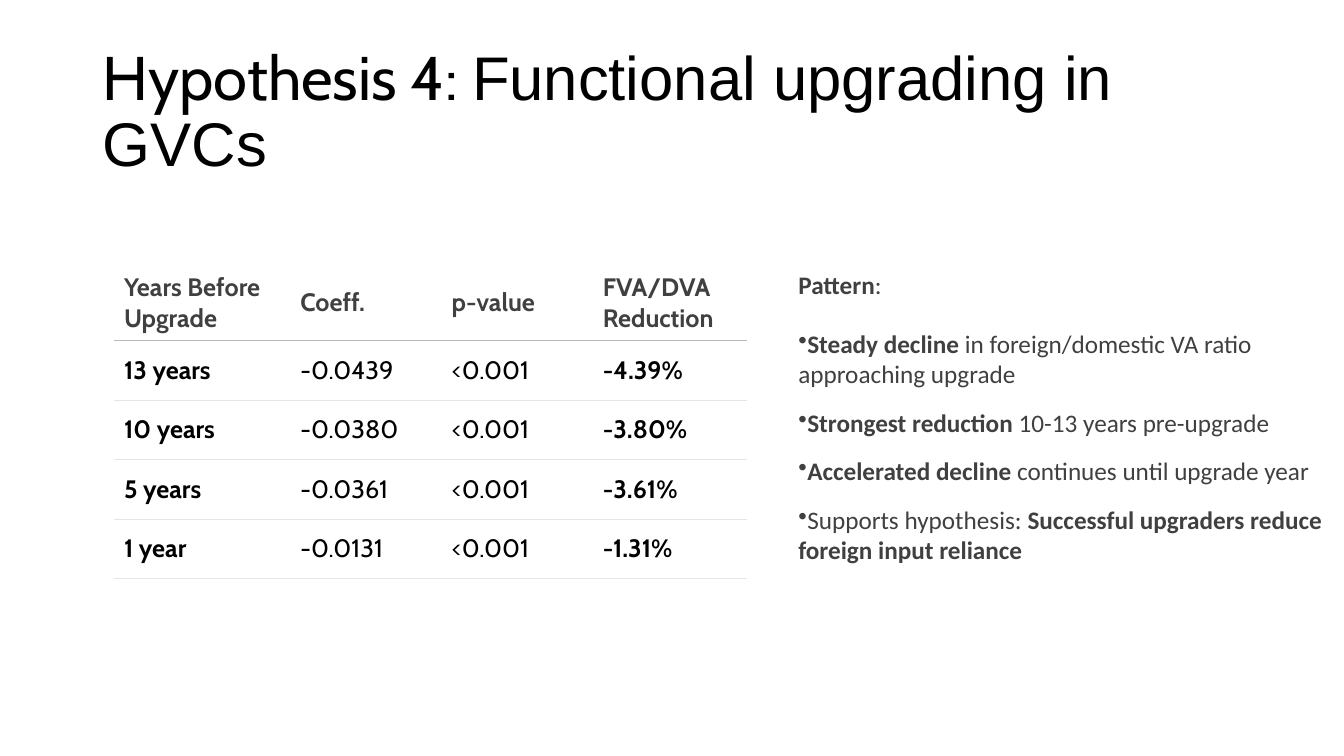
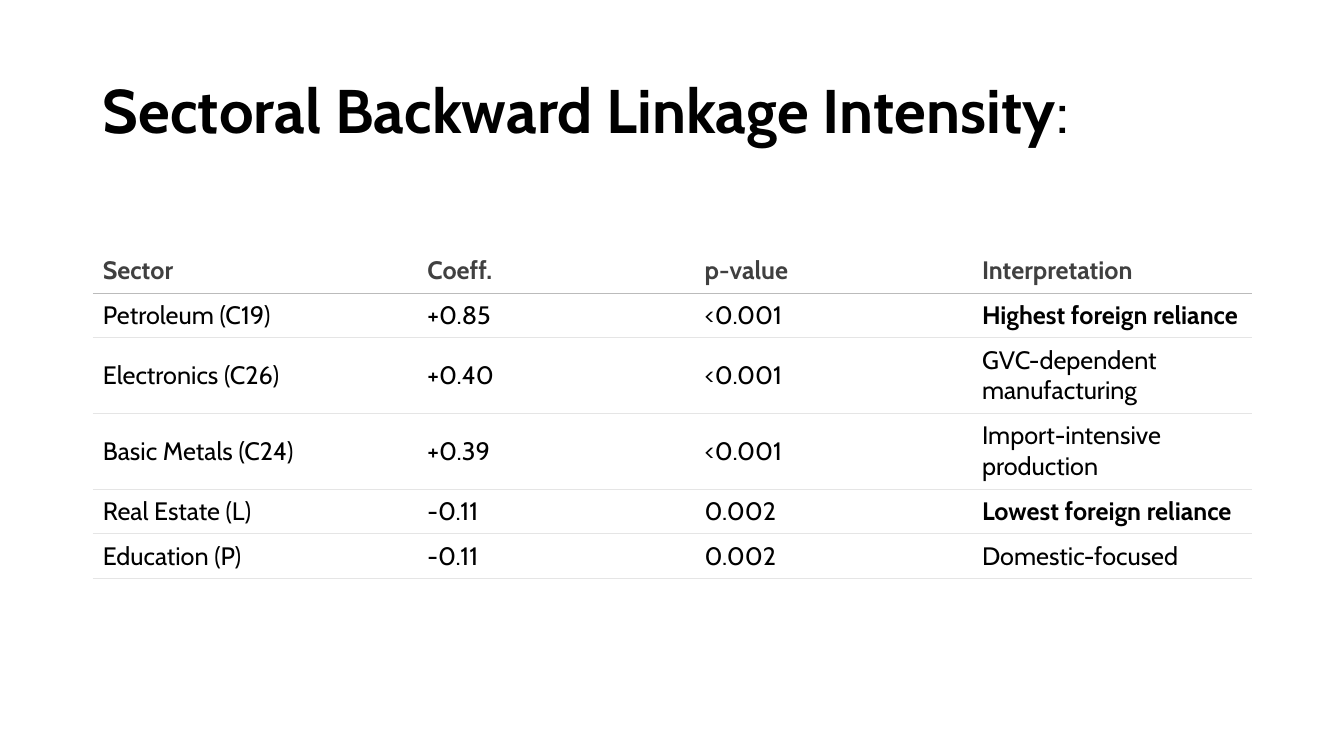
from lxml.etree import SubElement
from pptx import Presentation
from pptx.dml.color import RGBColor
from pptx.enum.text import MSO_ANCHOR as Anchor, MSO_AUTO_SIZE as AutoSize, PP_ALIGN as Align
from pptx.oxml.ns import qn
from pptx.util import Pt

PX = 9144  # EMU, 100 px to the inch
BLACK = RGBColor(0x00, 0x00, 0x00)
WHITE = RGBColor(0xFF, 0xFF, 0xFF)
GRAY = RGBColor(0x40, 0x40, 0x40)
HEADER_RULE = RGBColor(0xBB, 0xBB, 0xBB)
ROW_RULE = RGBColor(0xE5, 0xE5, 0xE5)
RULE_WIDTH = Pt(0.33)
TITLE_ONLY = 5


def px(*lengths):
    return [length * PX for length in lengths]


def write(para, *spans, font="Cabin", size=18, color=BLACK, bold=False):
    """Add spans to a paragraph; a span is text or (text, changed formats)."""
    for item in spans:
        text, changes = (item, {}) if isinstance(item, str) else item
        span = para.add_run()
        span.text = text
        span.font.name = changes.get("font", font)
        span.font.size = Pt(size)
        span.font.bold = changes.get("bold", bold)
        span.font.color.rgb = color


def set_border(cell, side, color=None):
    """Rule one side of a cell, or clear it when no colour is given."""
    line = SubElement(cell._tc.get_or_add_tcPr(), qn(f"a:ln{side}"), w=str(RULE_WIDTH))
    if color is None:
        SubElement(line, qn("a:noFill"))
    else:
        fill = SubElement(line, qn("a:solidFill"))
        SubElement(fill, qn("a:srgbClr"), val=str(color))


class Deck:
    def __init__(self):
        self.deck = Presentation()
        self.deck.slide_width, self.deck.slide_height = px(1333, 750)
        self.page = None

    def add_page(self, *title, **style):
        self.page = self.deck.slides.add_slide(self.deck.slide_layouts[TITLE_ONLY])
        box = self.page.shapes.title
        box.left, box.top, box.width, box.height = px(92, 40, 1150, 145)
        frame = box.text_frame
        frame.auto_size = AutoSize.NONE
        frame.word_wrap = True
        frame.vertical_anchor = Anchor.MIDDLE
        para = frame.paragraphs[0]
        para.alignment = Align.LEFT
        para.line_spacing = 0.9
        write(para, *title, size=44, **style)

    def add_table(self, left, top, widths, row_height, rows, is_bold):
        """Add a ruled table; is_bold(row, column) picks the bold body cells."""
        size = px(left, top, sum(widths), row_height * len(rows))
        table = self.page.shapes.add_table(len(rows), len(widths), *size).table
        table.horz_banding = False
        for column, width in zip(table.columns, px(*widths)):
            column.width = width
        for r, row in enumerate(rows):
            for c, text in enumerate(row):
                self.fill_cell(table.cell(r, c), text, r, c, r == 0 or is_bold(r, c))

    def fill_cell(self, cell, text, row, column, bold):
        top_rules = {0: None, 1: HEADER_RULE}
        set_border(cell, "L")
        set_border(cell, "R")
        set_border(cell, "T", top_rules.get(row, ROW_RULE))
        set_border(cell, "B", ROW_RULE if row else HEADER_RULE)
        cell.fill.solid()
        cell.fill.fore_color.rgb = WHITE
        cell.vertical_anchor = Anchor.MIDDLE
        cell.margin_left, cell.margin_right, cell.margin_top, cell.margin_bottom = px(
            7 if column else 10, 7, 7, 7)
        write(cell.text_frame.paragraphs[0], text,
              color=BLACK if row else GRAY, bold=bold)

    def add_notes_box(self, left, top, width, height, heading, points):
        """Add a text box with a heading line and bulleted points."""
        box = self.page.shapes.add_textbox(*px(left, top, width, height))
        frame = box.text_frame
        frame.word_wrap = True
        frame.auto_size = AutoSize.SHAPE_TO_FIT_TEXT
        for index, spans in enumerate([heading, *points]):
            para = frame.add_paragraph() if index else frame.paragraphs[0]
            para.line_spacing = Pt(21.4)
            para.space_before = Pt(10.3 if index < 2 else 3)
            para.space_after = Pt(10.3)
            if index:
                SubElement(para._p.get_or_add_pPr(), qn("a:buChar"), char="•")
            write(para, *spans, font="Calibri", color=GRAY)


def strong(text):
    return text, {"bold": True}


def main():
    deck = Deck()

    deck.add_page("Hypothesis 4: ", ("Functional upgrading in GVCs", {"font": "Arial"}))
    deck.add_table(113, 263, [178, 150, 150, 150], 59, [
        ("Years Before Upgrade", "Coeff.", "p-value", "FVA/DVA Reduction"),
        ("13 years", "-0.0439", "<0.001", "-4.39%"),
        ("10 years", "-0.0380", "<0.001", "-3.80%"),
        ("5 years", "-0.0361", "<0.001", "-3.61%"),
        ("1 year", "-0.0131", "<0.001", "-1.31%"),
    ], is_bold=lambda row, column: column in (0, 3))
    deck.add_notes_box(782, 263, 540, 299, [strong("Pattern"), ":"], [
        [strong("Steady decline"), " in foreign/domestic VA ratio approaching upgrade"],
        [strong("Strongest reduction"), " 10-13 years pre-upgrade"],
        [strong("Accelerated decline"), " continues until upgrade year"],
        ["Supports hypothesis: ",
         strong("Successful upgraders reduce foreign input reliance")],
    ])

    deck.add_page("Sectoral Backward Linkage Intensity", (":", {"bold": False}), bold=True)
    deck.add_table(92, 246, [325, 275, 275, 275], 44, [
        ("Sector", "Coeff.", "p-value", "Interpretation"),
        ("Petroleum (C19)", "+0.85", "<0.001", "Highest foreign reliance"),
        ("Electronics (C26)", "+0.40", "<0.001", "GVC-dependent manufacturing"),
        ("Basic Metals (C24)", "+0.39", "<0.001", "Import-intensive production"),
        ("Real Estate (L)", "-0.11", "0.002", "Lowest foreign reliance"),
        ("Education (P)", "-0.11", "0.002", "Domestic-focused"),
    ], is_bold=lambda row, column: column == 3 and row in (1, 4))

    deck.deck.save("out.pptx")


if __name__ == "__main__":
    main()
